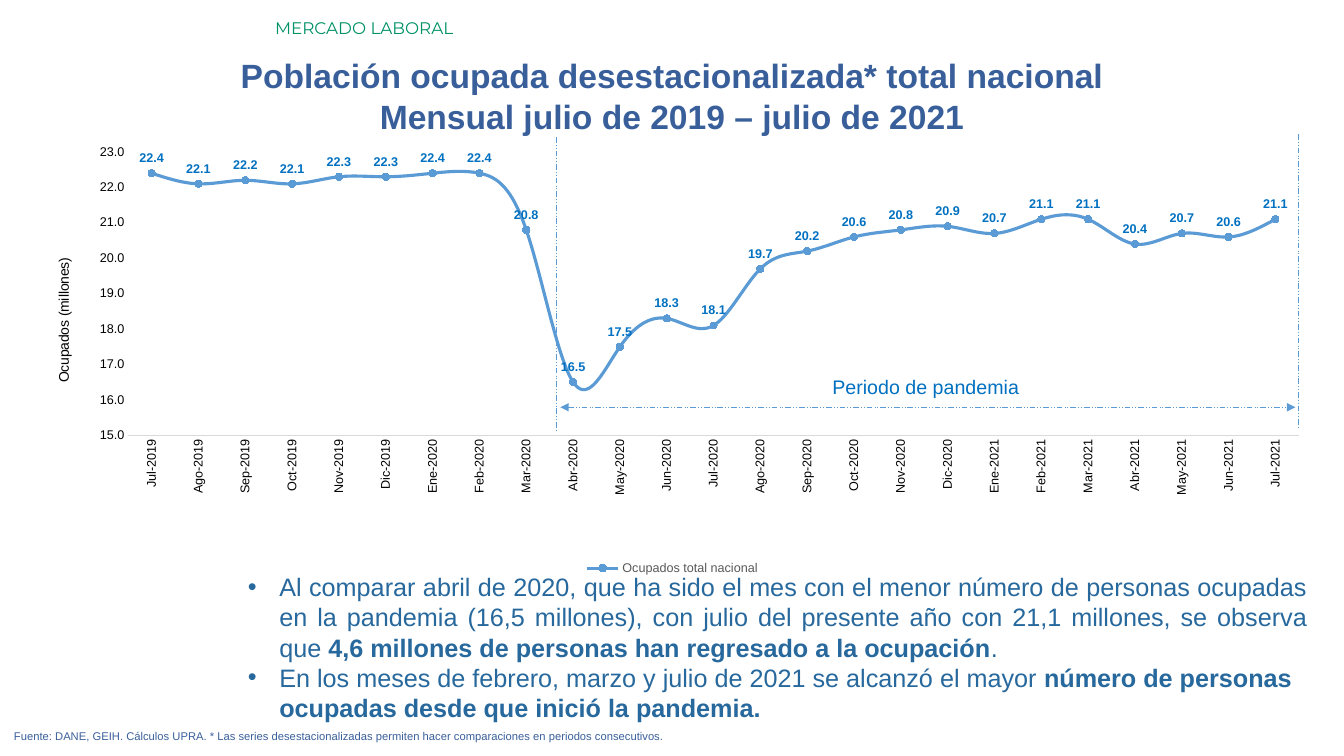
from dataclasses import dataclass

from lxml.etree import SubElement
from pptx import Presentation
from pptx.chart.data import CategoryChartData
from pptx.dml.color import RGBColor
from pptx.enum.chart import (XL_CHART_TYPE, XL_LABEL_POSITION,
                             XL_LEGEND_POSITION, XL_MARKER_STYLE,
                             XL_TICK_MARK)
from pptx.enum.dml import MSO_LINE
from pptx.enum.shapes import MSO_CONNECTOR
from pptx.enum.text import MSO_AUTO_SIZE, PP_ALIGN
from pptx.oxml import parse_xml
from pptx.oxml.ns import nsdecls, qn
from pptx.util import Pt


@dataclass(frozen=True)
class Theme:
    """Colours, fonts and type sizes of the slide."""
    green: str = "009267"
    navy: str = "395F9B"
    teal: str = "27689D"
    blue: str = "0070C0"
    sky: str = "5B9BD5"
    black: str = "000000"
    gray: str = "595959"
    pale: str = "D9D9D9"
    sans: str = "Arial"
    head: str = "Montserrat"
    title: float = 24
    body: float = 18
    label: float = 14
    kicker: float = 12
    axis: float = 10
    small: float = 9
    note: float = 8


class Board:
    """Draws styled elements on the current slide."""

    def __init__(self, slide, theme):
        """Keep the slide and its theme."""
        self.slide, self.theme = slide, theme

    def style(self, font, size, color, bold=False, face=None):
        """Format one font."""
        font.name = face or self.theme.sans
        font.size = Pt(size)
        font.bold = bold
        font.color.rgb = RGBColor.from_string(color)

    def frame(self, box):
        """Add a wrapping text box and return its frame."""
        frame = self.slide.shapes.add_textbox(*map(Pt, box)).text_frame
        frame.word_wrap = True
        frame.auto_size = MSO_AUTO_SIZE.SHAPE_TO_FIT_TEXT
        return frame

    def text(self, box, text, size, color, align=PP_ALIGN.LEFT, **look):
        """Add text in a single style."""
        frame = self.frame(box)
        frame.text = text
        for para in frame.paragraphs:
            para.alignment = align
            for run in para.runs:
                self.style(run.font, size, color, **look)

    def bullets(self, box, items, size, color):
        """Add bullets whose odd parts are bold."""
        frame = self.frame(box)
        for i, (align, parts) in enumerate(items):
            para = frame.add_paragraph() if i else frame.paragraphs[0]
            para.alignment = align
            props = para._p.get_or_add_pPr()
            props.set("marL", str(Pt(22.5)))
            props.set("indent", str(-Pt(22.5)))
            SubElement(props, qn("a:buFont"), typeface=self.theme.sans)
            SubElement(props, qn("a:buChar"), char="•")
            for j, part in enumerate(parts):
                run = para.add_run()
                run.text = part
                self.style(run.font, size, color, bold=j % 2 == 1)

    def line(self, start, end, arrows=False):
        """Add a thin dashed line, with arrows at both ends if asked."""
        link = self.slide.shapes.add_connector(
            MSO_CONNECTOR.STRAIGHT, *map(Pt, start + end))
        link.line.color.rgb = RGBColor.from_string(self.theme.sky)
        link.line.width = Pt(0.5)
        link.line.dash_style = MSO_LINE.DASH_DOT_DOT
        props = link.element.spPr
        if arrows:
            for tip in ("a:headEnd", "a:tailEnd"):
                SubElement(props.find(qn("a:ln")), qn(tip), type="triangle")
        SubElement(props, qn("a:effectLst"))

    def place(self, node, index, **spots):
        """Give a chart part a manual layout."""
        for old in node.findall(qn("c:layout")):
            node.remove(old)
        marks = "".join(f'<c:{key} val="{val}"/>' for key, val in spots.items())
        node.insert(index, parse_xml(
            f'<c:layout {nsdecls("c")}><c:manualLayout>{marks}'
            '</c:manualLayout></c:layout>'))

    def chart(self, box, inner, cats, name, vals, label):
        """Add a smooth line chart with value labels."""
        look = self.theme
        sky = RGBColor.from_string(look.sky)
        data = CategoryChartData(number_format="0.0")
        data.categories = cats
        data.add_series(name, vals)
        chart = self.slide.shapes.add_chart(
            XL_CHART_TYPE.LINE_MARKERS, *map(Pt, box), data).chart
        self.style(chart.font, look.axis, look.black)
        root = chart.element
        root.find(qn("c:txPr")).addprevious(parse_xml(
            f'<c:spPr {nsdecls("c", "a")}><a:noFill/>'
            '<a:ln><a:noFill/></a:ln></c:spPr>'))
        chart.has_title = False
        chart.has_legend = True
        chart.legend.position = XL_LEGEND_POSITION.BOTTOM
        chart.legend.include_in_layout = False
        self.style(chart.legend.font, look.small, look.gray)

        base, side = chart.category_axis, chart.value_axis
        for axis in (base, side):
            axis.has_major_gridlines = False
            axis.major_tick_mark = axis.minor_tick_mark = XL_TICK_MARK.NONE
            self.style(axis.tick_labels.font, look.small, look.black)
        base.format.line.color.rgb = RGBColor.from_string(look.pale)
        base.format.line.width = Pt(0.75)
        turn = root.find(f'.//{qn("c:catAx")}/{qn("c:txPr")}/{qn("a:bodyPr")}')
        turn.set("rot", "-5400000")
        turn.set("vert", "horz")
        side.format.line.fill.background()
        side.minimum_scale, side.maximum_scale, side.major_unit = 15, 23, 1
        side.tick_labels.number_format = "0.0"
        side.tick_labels.number_format_is_linked = False
        side.axis_title.text_frame.text = label
        self.style(side.axis_title.text_frame.paragraphs[0].runs[0].font,
                   look.axis, look.black)
        self.place(root.find(f'.//{qn("c:valAx")}/{qn("c:title")}'), 1,
                   xMode="edge", yMode="edge", x=0.02, y=0.28)
        shares = [part / box[2 + i % 2] for i, part in enumerate(inner)]
        self.place(root.find(f'.//{qn("c:plotArea")}'), 0,
                   layoutTarget="inner", xMode="edge", yMode="edge",
                   **dict(zip("xywh", shares)))

        plot = chart.plots[0]
        plot.vary_by_categories = False
        curve = plot.series[0]
        curve.smooth = True
        curve.format.line.color.rgb = sky
        curve.format.line.width = Pt(2.25)
        curve.marker.style = XL_MARKER_STYLE.CIRCLE
        curve.marker.size = 5
        curve.marker.format.fill.solid()
        curve.marker.format.fill.fore_color.rgb = sky
        curve.marker.format.line.color.rgb = sky
        tags = curve.data_labels
        tags.show_value = True
        tags.position = XL_LABEL_POSITION.ABOVE
        tags.number_format = "0.0"
        tags.number_format_is_linked = False
        self.style(tags.font, look.small, look.blue, bold=True)


def main():
    """Build and save the slide."""
    deck = Presentation()
    deck.slide_width, deck.slide_height = Pt(960), Pt(540)
    look = Theme()
    board = Board(deck.slides.add_slide(deck.slide_layouts[6]), look)

    board.text((189.4, 9.4, 770.4, 21.6), "MERCADO LABORAL",
               look.kicker, look.green, face=look.head)
    board.text((0, 36, 960, 65.5),
               "Población ocupada desestacionalizada* total nacional\n"
               "Mensual julio de 2019 – julio de 2021",
               look.title, look.navy, PP_ALIGN.CENTER, bold=True)
    board.text((2.9, 517.7, 929.5, 17.3),
               "Fuente: DANE, GEIH. Cálculos UPRA. * Las series "
               "desestacionalizadas permiten hacer comparaciones en "
               "periodos consecutivos.",
               look.note, look.navy, PP_ALIGN.JUSTIFY)
    board.line((397.4, 97.9), (397.4, 308.9))
    board.text((587.5, 264.2, 189.4, 24.5), "Periodo de pandemia",
               look.label, look.blue)
    board.bullets((169.9, 404.6, 771.1, 116.6), [
        (PP_ALIGN.JUSTIFY, (
            "Al comparar abril de 2020, que ha sido el mes con el menor "
            "número de personas ocupadas en la pandemia (16,5 millones), "
            "con julio del presente año con 21,1 millones, se observa que ",
            "4,6 millones de personas han regresado a la ocupación", ".")),
        (PP_ALIGN.LEFT, (
            "En los meses de febrero, marzo y julio de 2021 se alcanzó "
            "el mayor ",
            "número de personas ocupadas desde que inició la pandemia.")),
    ], look.body, look.teal)
    board.line((400.3, 290.9), (925.2, 290.9), arrows=True)

    names = "Ene Feb Mar Abr May Jun Jul Ago Sep Oct Nov Dic".split()
    months = [f"{names[i % 12]}-{2019 + i // 12}" for i in range(6, 31)]
    jobs = (22.4, 22.1, 22.2, 22.1, 22.3, 22.3, 22.4, 22.4, 20.8, 16.5,
            17.5, 18.3, 18.1, 19.7, 20.2, 20.6, 20.8, 20.9, 20.7, 21.1,
            21.1, 20.4, 20.7, 20.6, 21.1)
    board.chart((18.7, 92.2, 923, 321.8), (72.9, 16.4, 836.2, 202.4),
                months, "Ocupados total nacional", jobs,
                "Ocupados (millones)")
    board.line((927.4, 95.8), (927.4, 306.7))
    deck.save("out.pptx")


if __name__ == "__main__":
    main()
